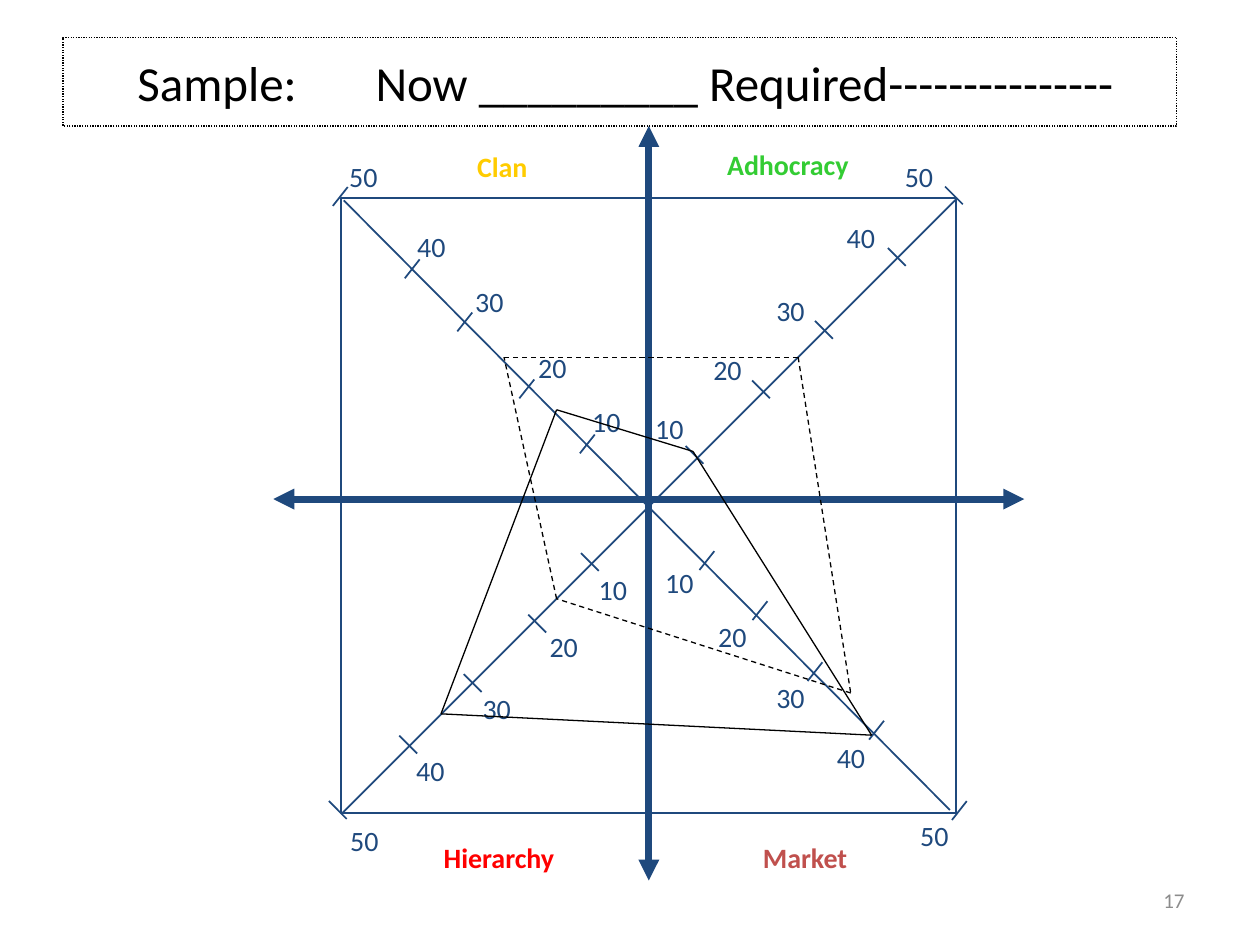
import itertools
import pptx
import pptx.util
import pptx.dml.color
import pptx.enum.dml
import pptx.enum.shapes
import pptx.enum.text
import pptx.oxml
import pptx.oxml.ns
from lxml import etree

Cm = pptx.util.Cm
Pt = pptx.util.Pt
ALIGN = pptx.enum.text.PP_ALIGN
DASH = pptx.enum.dml.MSO_LINE
FONT = "Calibri"
COLORS = {
    "navy": "1F497D", "black": "000000", "white": "FFFFFF", "gray": "8C8C8C",
    "clan": "FFCC00", "adhocracy": "33CC33", "market": "C0504D", "hierarchy": "FF0000",
}
SCORES = (10, 20, 30, 40, 50)
RISING = (0.15, -0.19)
FALLING = (0.18, 0.18)

QUADRANTS = [
    ("Clan", "clan", (8.59, 2.82, 3.07)),
    ("Adhocracy", "adhocracy", (13.36, 2.77, 5.05)),
    ("Market", "market", (14.45, 16.74, 3.56)),
    ("Hierarchy", "hierarchy", (7.67, 16.74, 4.78)),
]
SCALES = [
    (RISING,
     [(11.84, 8.95), (10.62, 7.84), (9.37, 6.49), (8.31, 5.42), (6.86, 3.96)],
     [(11.53, 7.95), (10.44, 6.86), (9.17, 5.54), (8, 4.42), (6.63, 3.02)]),
    (FALLING,
     [(11.89, 11.33), (10.83, 12.57), (9.53, 13.77), (8.23, 15.01), (6.81, 16.33)],
     [(11.66, 11.35), (10.67, 12.5), (9.32, 13.74), (7.98, 14.99), (6.65, 16.41)]),
    (RISING,
     [(14.25, 11.3), (15.32, 12.31), (16.43, 13.54), (17.67, 14.72), (19.34, 16.34)],
     [(13, 11.2), (14.07, 12.29), (15.24, 13.51), (16.46, 14.73), (18.14, 16.31)]),
    (FALLING,
     [(14, 9.17), (15.34, 7.85), (16.61, 6.65), (18.08, 5.18), (19.23, 3.94)],
     [(12.8, 8.1), (13.97, 6.91), (15.24, 5.72), (16.66, 4.24), (17.83, 3.02)]),
]
NOW = [(11.22, 8.26), (13.97, 9.1), (17.57, 14.82), (8.89, 14.39)]
REQUIRED = [(10.16, 7.2), (16.09, 7.2), (17.15, 13.97), (11.22, 12.07)]


def rgb(name):
    return pptx.dml.color.RGBColor.from_string(COLORS[name])


def add_run(p, text, size, color, bold=False):
    r = p.add_run()
    r.text = text
    r.font.name = FONT
    r.font.size = Pt(size)
    r.font.bold = bold
    r.font.color.rgb = rgb(color)


def set_line(line, color, width, dash=None):
    line.color.rgb = rgb(color)
    line.width = Pt(width)
    if dash:
        line.dash_style = dash


def add_title(s):
    sp = s.shapes.title
    sp.left, sp.top, sp.width, sp.height = Cm(1.27), Cm(0.76), Cm(22.45), Cm(1.78)
    set_line(sp.line, "black", 0.75, DASH.ROUND_DOT)
    tf = sp.text_frame
    tf.auto_size = pptx.enum.text.MSO_AUTO_SIZE.NONE
    tf.vertical_anchor = pptx.enum.text.MSO_ANCHOR.MIDDLE
    tf.margin_left = Cm(1.5)
    p = tf.paragraphs[0]
    p.alignment = ALIGN.LEFT
    tabs = etree.SubElement(p._p.get_or_add_pPr(), pptx.oxml.ns.qn("a:tabLst"))
    etree.SubElement(tabs, pptx.oxml.ns.qn("a:tab"), pos=str(Cm(4.8)), algn="l")
    add_run(p, "Sample:\t", 28, "black")
    add_run(p, "Now _________ ", 28, "black")
    add_run(p, "Required---------------", 28, "black")


def add_label(s, text, x, y, width, color, bold=False, align=ALIGN.LEFT, size=16):
    tf = s.shapes.add_textbox(Cm(x), Cm(y), Cm(width), Cm(1.09)).text_frame
    tf.word_wrap = True
    tf.margin_left = tf.margin_right = Cm(0.41)
    tf.margin_top = tf.margin_bottom = Cm(0.2)
    p = tf.paragraphs[0]
    p.alignment = align
    add_run(p, text, size, color, bold)
    return tf


def add_page_number(s):
    tf = add_label(s, "17", 18.21, 17.61, 5.92, "gray", align=ALIGN.RIGHT, size=12)
    tf.margin_left = tf.margin_right = Cm(0.25)
    tf.vertical_anchor = pptx.enum.text.MSO_ANCHOR.MIDDLE


def add_line(s, start, end, color="navy", width=1, dash=None, arrows=False):
    kind = pptx.enum.shapes.MSO_CONNECTOR.STRAIGHT
    sp = s.shapes.add_connector(kind, *map(Cm, start + end))
    set_line(sp.line, color, width, dash)
    if arrows:
        for tag in ("a:headEnd", "a:tailEnd"):
            etree.SubElement(sp.line._ln, pptx.oxml.ns.qn(tag), type="triangle")
    etree.SubElement(sp._element.spPr, pptx.oxml.ns.qn("a:effectLst"))


def add_frame(s):
    kind = pptx.enum.shapes.MSO_SHAPE.RECTANGLE
    sp = s.shapes.add_shape(kind, Cm(6.88), Cm(3.99), Cm(12.4), Cm(12.4))
    sp.shadow.inherit = False
    sp.fill.solid()
    sp.fill.fore_color.rgb = rgb("white")
    set_line(sp.line, "navy", 1)
    add_line(s, (13.08, 2.54), (13.08, 17.75), width=4, arrows=True)
    add_line(s, (5.51, 10.06), (20.65, 10.06), width=4, arrows=True)
    add_line(s, (6.93, 4.04), (19.15, 16.33))
    add_line(s, (19.3, 3.99), (6.91, 16.38))


def add_scale(s, slant, ticks, labels):
    dx, dy = slant
    for score, (x, y), (left, top) in zip(SCORES, ticks, labels):
        add_line(s, (x - dx, y - dy), (x + dx, y + dy))
        add_label(s, str(score), left, top, 1.78, "navy")


def add_profile(s, corners, dash=None):
    for start, end in itertools.pairwise(corners + corners[:1]):
        add_line(s, start, end, "black", 0.75, dash)


def main():
    prs = pptx.Presentation()
    prs.slide_width, prs.slide_height = Cm(25.4), Cm(19.05)
    s = prs.slides.add_slide(prs.slide_layouts[5])
    add_title(s)
    add_page_number(s)
    add_frame(s)
    for name, color, (x, y, width) in QUADRANTS:
        add_label(s, name, x, y, width, color, True, ALIGN.CENTER)
    for slant, ticks, labels in SCALES:
        add_scale(s, slant, ticks, labels)
    add_profile(s, NOW)
    add_profile(s, REQUIRED, DASH.DASH)
    prs.save("out.pptx")


if __name__ == "__main__":
    main()
